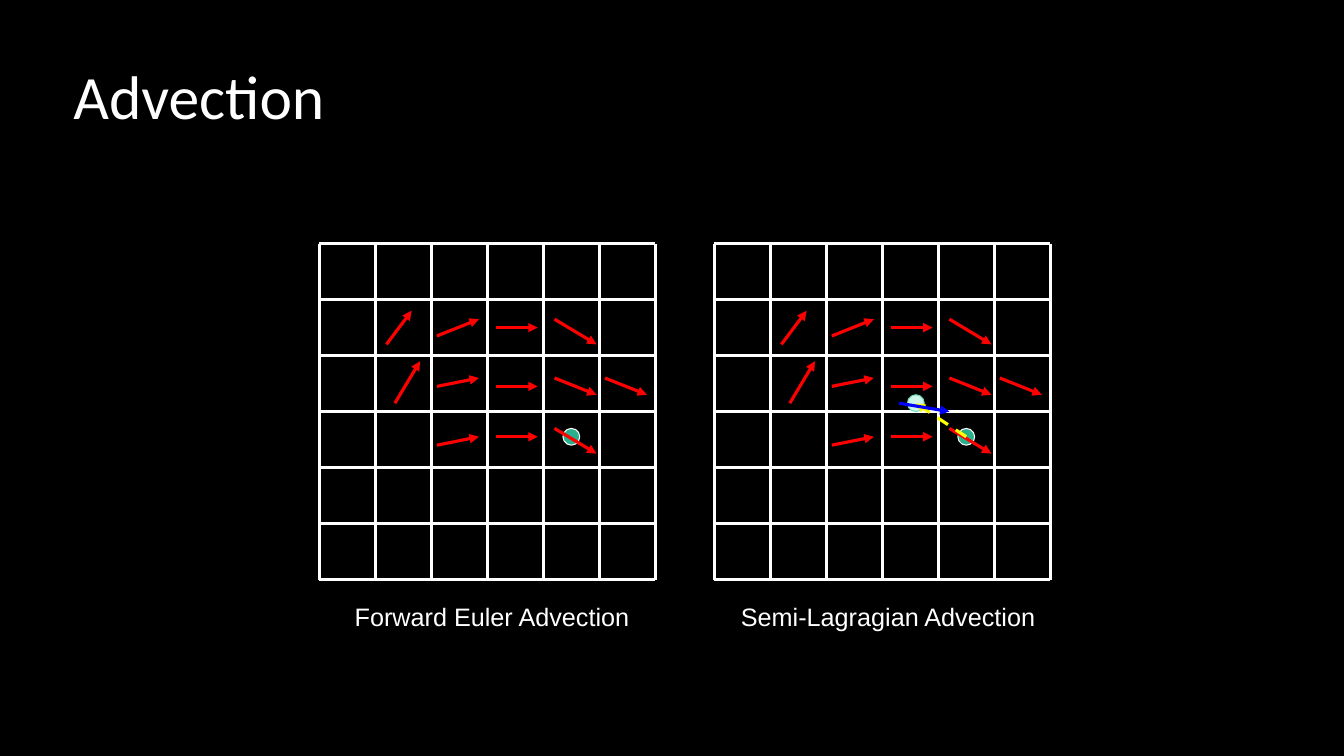
from dataclasses import dataclass

from lxml.etree import SubElement
from pptx import Presentation
from pptx.dml.color import RGBColor
from pptx.enum.dml import MSO_LINE
from pptx.enum.shapes import MSO_CONNECTOR, MSO_SHAPE
from pptx.enum.text import MSO_ANCHOR
from pptx.oxml.ns import qn
from pptx.util import Inches, Pt


@dataclass(frozen=True)
class Theme:
    background: str = "000000"
    white: str = "FFFFFF"
    velocity: str = "FF0000"
    backtrace: str = "FFFF00"
    sampled: str = "0000FF"
    particle: str = "29AF8C"
    origin_fill: str = "CFF4EA"
    origin_line: str = "70DEC1"
    title_font: str = "Calibri"
    caption_font: str = "Arial"
    title_size: int = 44
    caption_size: int = 18
    stroke: float = 2.25
    outline: float = 0.75


class SlideBuilder:
    def __init__(self, slide, theme):
        self.slide = slide
        self.theme = theme
        fill = slide.background.fill
        fill.solid()
        fill.fore_color.rgb = RGBColor.from_string(theme.background)

    def text(self, words, left, top, width, height, font, size,
             anchor=MSO_ANCHOR.TOP, line_spacing=None):
        box = self.slide.shapes.add_textbox(
            Inches(left), Inches(top), Inches(width), Inches(height))
        frame = box.text_frame
        frame.word_wrap = True
        frame.vertical_anchor = anchor
        para = frame.paragraphs[0]
        para.line_spacing = line_spacing
        span = para.add_run()
        span.text = words
        span.font.name = font
        span.font.size = Pt(size)
        span.font.color.rgb = RGBColor.from_string(self.theme.white)

    def line(self, start, end, color, arrow=False, dashed=False):
        connector = self.slide.shapes.add_connector(
            MSO_CONNECTOR.STRAIGHT, *map(Inches, (*start, *end)))
        line = connector.line
        line.color.rgb = RGBColor.from_string(color)
        line.width = Pt(self.theme.stroke)
        if dashed:
            line.dash_style = MSO_LINE.DASH
        properties = connector.element.spPr
        if arrow:
            SubElement(properties.find(qn("a:ln")), qn("a:tailEnd"), type="triangle")
        SubElement(properties, qn("a:effectLst"))

    def dot(self, corner, size, fill, outline):
        dot = self.slide.shapes.add_shape(
            MSO_SHAPE.OVAL, *map(Inches, (*corner, size, size)))
        dot.shadow.inherit = False
        dot.fill.solid()
        dot.fill.fore_color.rgb = RGBColor.from_string(fill)
        dot.line.color.rgb = RGBColor.from_string(outline)
        dot.line.width = Pt(self.theme.outline)


# Drawing unit is a twelfth of an inch, measured from each grid's corner
UNIT = 1 / 12
GRID_TOP = 29 * UNIT
GRID_SIZE = 40
CELLS = 6
DOT_SIZE = 2 * UNIT

# Velocity arrows: from x, from y, to x, to y
ARROWS_BELOW = [
    (8, 12, 11, 8), (14, 11, 19, 9), (21, 10, 26, 10), (9, 19, 12, 14),
    (14, 17, 19, 16), (21, 17, 26, 17), (28, 16, 33, 18), (28, 9, 33, 12),
]
ARROWS_ABOVE = [
    (34, 16, 39, 18), (28, 22, 33, 25), (21, 23, 26, 23), (14, 24, 19, 23),
]

theme = Theme()
deck = Presentation()
deck.slide_width = Inches(13.33)
deck.slide_height = Inches(7.5)
page = SlideBuilder(deck.slides.add_slide(deck.slide_layouts[6]), theme)


def place(left, x, y):
    return left + x * UNIT, GRID_TOP + y * UNIT


def draw_arrow(left, ends, color, dashed=False):
    page.line(place(left, *ends[:2]), place(left, *ends[2:]), color, True, dashed)


def draw_panel(left):
    """Grid, velocity field and particle."""
    for index in range(CELLS + 1):
        step = index * GRID_SIZE / CELLS
        page.line(place(left, 0, step), place(left, GRID_SIZE, step), theme.white)
        page.line(place(left, step, 0), place(left, step, GRID_SIZE), theme.white)
    for ends in ARROWS_BELOW:
        draw_arrow(left, ends, theme.velocity)
    page.dot(place(left, 29, 22), DOT_SIZE, theme.particle, theme.white)
    for ends in ARROWS_ABOVE:
        draw_arrow(left, ends, theme.velocity)


# Title
page.text("Advection", 0.63, 0.26, 11.5, 1.45, theme.title_font,
          theme.title_size, MSO_ANCHOR.MIDDLE, 0.9)

# Both panels
euler_left, lagrangian_left = 38 * UNIT, 85 * UNIT
for panel_left in (lagrangian_left, euler_left):
    draw_panel(panel_left)

# Backward trace with the velocity sampled at its origin
page.dot(place(lagrangian_left, 23, 18), DOT_SIZE, theme.origin_fill, theme.origin_line)
draw_arrow(lagrangian_left, (30, 23, 24, 19), theme.backtrace, dashed=True)
draw_arrow(lagrangian_left, (22, 19, 28, 20), theme.sampled)

# Captions
for caption, caption_left, caption_width in (
        ("Forward Euler Advection", 3.42, 3.33),
        ("Semi-Lagragian Advection", 7.25, 3.25)):
    page.text(caption, caption_left, 5.92, caption_width, 0.4,
              theme.caption_font, theme.caption_size)

deck.save("out.pptx")
